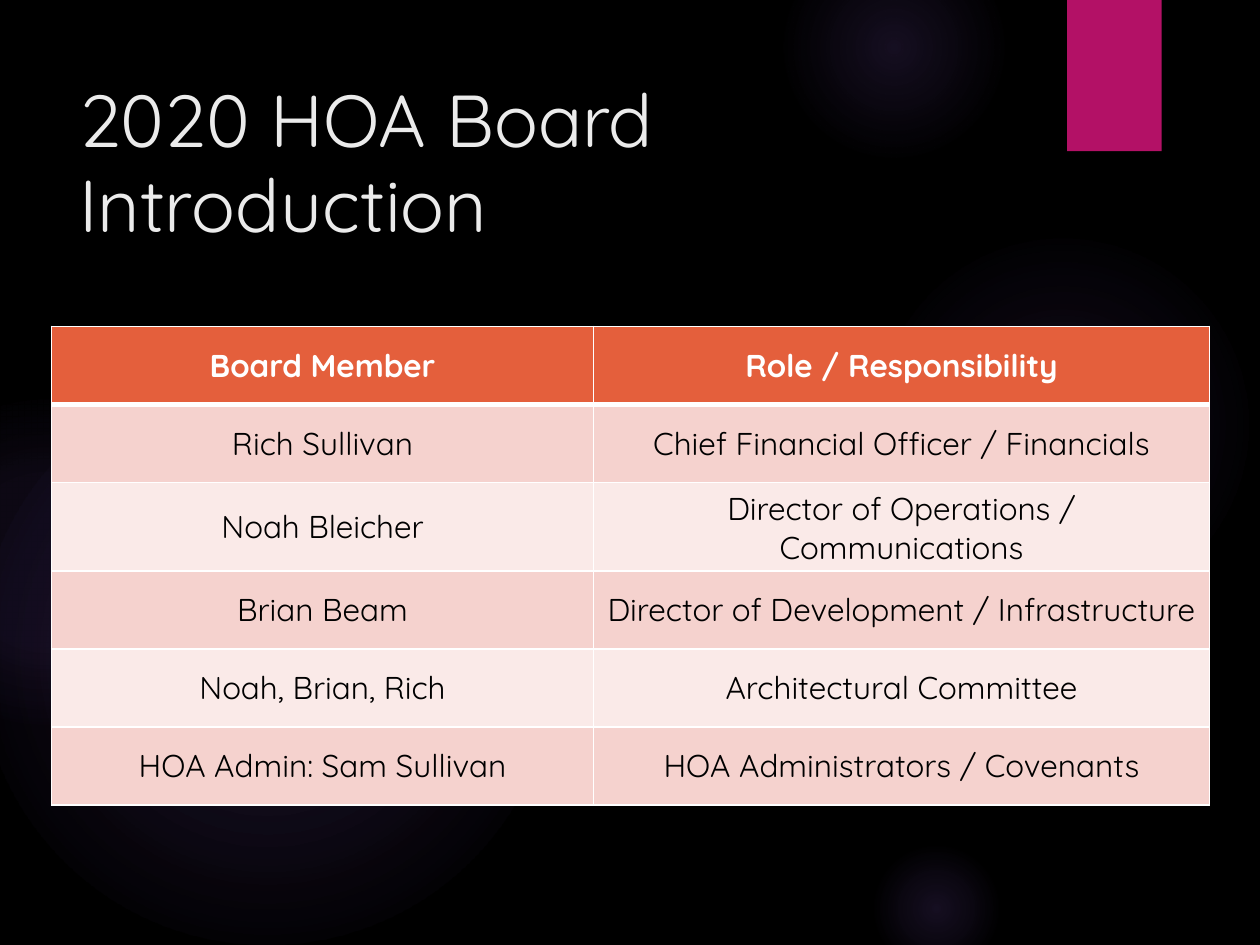
from pptx import Presentation
from pptx.dml.color import RGBColor
from pptx.enum.shapes import MSO_SHAPE
from pptx.enum.text import MSO_ANCHOR, PP_ALIGN
from pptx.oxml import parse_xml
from pptx.oxml.ns import nsdecls
from pptx.util import Inches, Pt

BLACK = RGBColor(0x00, 0x00, 0x00)
WHITE = RGBColor(0xFF, 0xFF, 0xFF)
TITLE_GREY = RGBColor(0xEB, 0xEB, 0xEB)
VIOLET = RGBColor(0x9B, 0x6B, 0xF2)
MAGENTA = RGBColor(0xB3, 0x11, 0x66)
ORANGE = RGBColor(0xE4, 0x5F, 0x3C)
ROSE = RGBColor(0xF5, 0xD2, 0xCE)
PALE_ROSE = RGBColor(0xFA, 0xEA, 0xE8)

COLUMNS, ROWS = 100, 75  # slide grid
WIDTH, HEIGHT = Inches(10), Inches(7.5)

# Column, row, diameter, then (position %, opacity %) of each gradient stop
HALOS = [
    (68.9, 18.3, 30.8, [(0, 7), (36, 6), (69, 0)]),
    (62.2, -5, 17.5, [(0, 14), (36, 7), (73, 0)]),
    (68.9, 66.7, 10.8, [(0, 14), (36, 7), (66, 0)]),
    (-1.7, 29.2, 45.8, [(0, 11), (36, 10), (75, 0)]),
    (-9.2, 31.7, 25.8, [(0, 8), (36, 8), (72, 0)]),
]

BOARD = [
    ("Board Member", "Role / Responsibility"),
    ("Rich Sullivan", "Chief Financial Officer / Financials"),
    ("Noah Bleicher", "Director of Operations / Communications"),
    ("Brian Beam", "Director of Development / Infrastructure"),
    ("Noah, Brian, Rich", "Architectural Committee"),
    ("HOA Admin: Sam Sullivan", "HOA Administrators / Covenants"),
]


def write(frame, text, size=18, color=BLACK, bold=False,
          align=PP_ALIGN.LEFT, spacing=None):
    """Fill a text frame with one paragraph; \\v breaks the line."""
    paragraph = frame.paragraphs[0]
    paragraph.text = text
    paragraph.alignment = align
    if spacing:
        paragraph.line_spacing = spacing
    for run in paragraph.runs:
        run.font.name = "Quicksand"
        run.font.size = Pt(size)
        run.font.bold = bold
        run.font.color.rgb = color


class Canvas:
    """Places styled elements on one slide by grid columns and rows."""

    def __init__(self, slide, background):
        self.slide = slide
        fill = slide.background.fill
        fill.solid()
        fill.fore_color.rgb = background

    def box(self, column, row, columns, rows):
        return (int(WIDTH * column / COLUMNS), int(HEIGHT * row / ROWS),
                int(WIDTH * columns / COLUMNS), int(HEIGHT * rows / ROWS))

    def shape(self, kind, *place, color):
        shape = self.slide.shapes.add_shape(kind, *self.box(*place))
        shape.shadow.inherit = False
        shape.fill.solid()
        shape.fill.fore_color.rgb = color
        shape.line.fill.background()
        return shape

    def halo(self, column, row, diameter, stops):
        halo = self.shape(MSO_SHAPE.OVAL, column, row, diameter, diameter, color=VIOLET)
        gradient_stops = "".join(
            f'<a:gs pos="{position * 1000}"><a:srgbClr val="{VIOLET}">'
            f'<a:alpha val="{opacity * 1000}"/></a:srgbClr></a:gs>'
            for position, opacity in stops)
        gradient = parse_xml(
            f'<a:gradFill {nsdecls("a")} rotWithShape="1"><a:gsLst>{gradient_stops}</a:gsLst>'
            '<a:path path="circle"><a:fillToRect l="50000" t="50000" r="50000" b="50000"/>'
            '</a:path></a:gradFill>')
        properties = halo._element.spPr
        properties.replace(properties.find("{*}solidFill"), gradient)

    def ribbon(self, *place):
        ribbon = self.shape(MSO_SHAPE.RECTANGLE, *place, color=MAGENTA)
        ribbon._element.spPr.find("{*}effectLst").append(parse_xml(
            f'<a:outerShdw {nsdecls("a")} blurRad="{Pt(3)}" dist="{Pt(2)}" dir="5400000" '
            f'rotWithShape="0"><a:srgbClr val="{BLACK}"><a:alpha val="45000"/>'
            '</a:srgbClr></a:outerShdw>'))

    def title(self, text, *place):
        frame = self.slide.shapes.add_textbox(*self.box(*place)).text_frame
        frame.word_wrap = True
        frame.vertical_anchor = MSO_ANCHOR.BOTTOM
        write(frame, text, size=42, color=TITLE_GREY, spacing=0.96)

    def borders(self, cell, **widths):
        properties = cell._tc.get_or_add_tcPr()
        for index, (side, width) in enumerate(widths.items()):
            properties.insert(index, parse_xml(
                f'<a:ln{side} {nsdecls("a")} w="{Pt(width)}"><a:solidFill>'
                f'<a:srgbClr val="{WHITE}"/></a:solidFill></a:ln{side}>'))

    def table(self, records, column, row, widths, row_height):
        place = self.box(column, row, sum(widths), row_height * len(records))
        table = self.slide.shapes.add_table(len(records), len(widths), *place).table
        for table_column, width in zip(table.columns, widths):
            table_column.width = int(WIDTH * width / COLUMNS)
        for r, record in enumerate(records):
            header = r == 0
            fill = ORANGE if header else (ROSE if r % 2 else PALE_ROSE)
            for c, text in enumerate(record):
                cell = table.cell(r, c)
                cell.fill.solid()
                cell.fill.fore_color.rgb = fill
                cell.vertical_anchor = MSO_ANCHOR.MIDDLE
                write(cell.text_frame, text, color=WHITE if header else BLACK,
                      bold=header, align=PP_ALIGN.CENTER)
                # A heavier rule separates the header from the members
                self.borders(cell, L=1, R=1, T=3 if r == 1 else 1, B=3 if header else 1)


def main():
    deck = Presentation()
    deck.slide_width, deck.slide_height = WIDTH, HEIGHT
    canvas = Canvas(deck.slides.add_slide(deck.slide_layouts[6]), BLACK)

    # Background glow and corner ribbon
    for halo in HALOS:
        canvas.halo(*halo)
    canvas.ribbon(84.7, 0, 7.5, 12)

    # Heading and board roster
    canvas.title("2020 HOA Board\vIntroduction", 5.3, 5, 77.2, 15.3)
    canvas.table(BOARD, 4.1, 25.9, widths=(43, 48.9), row_height=6.2)

    deck.save("out.pptx")


if __name__ == "__main__":
    main()
